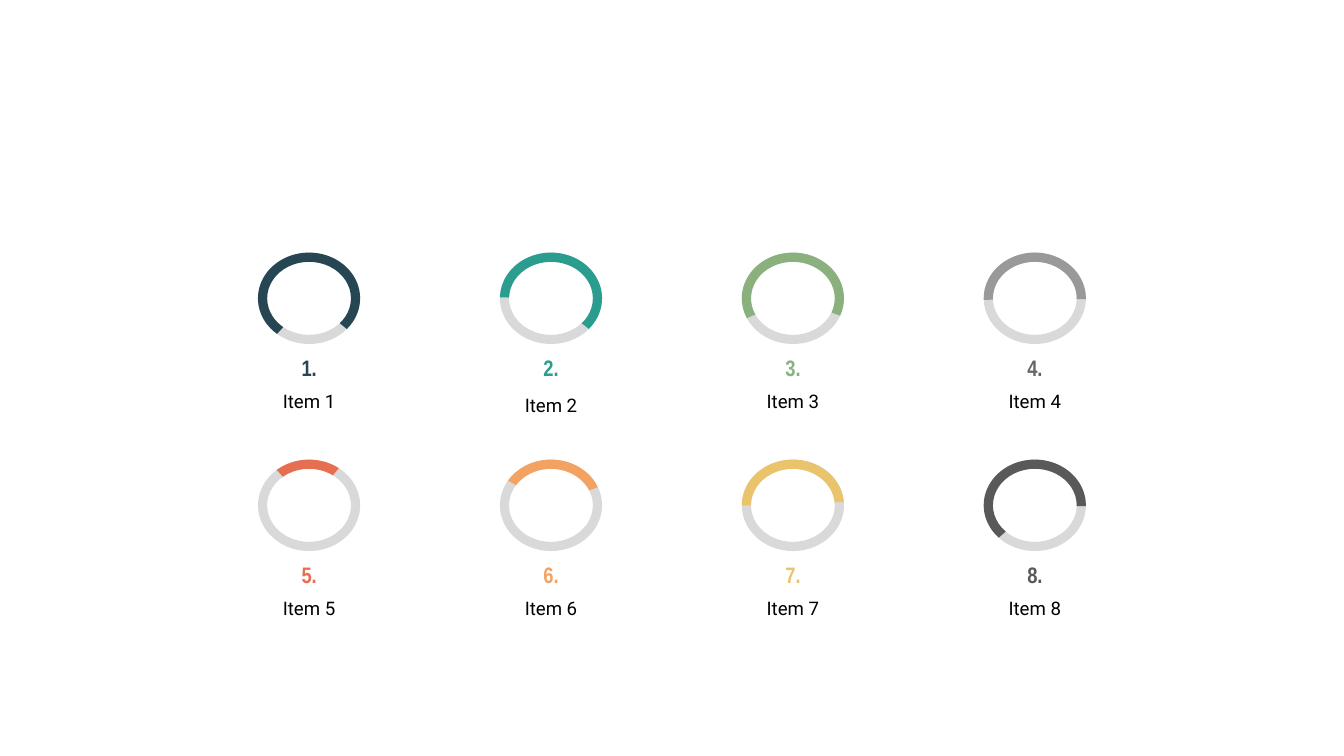
"""Build a slide with eight numbered progress rings in a four-by-two grid."""
from pptx import Presentation
from pptx.dml.color import RGBColor
from pptx.enum.shapes import MSO_SHAPE as Shape
from pptx.enum.text import MSO_ANCHOR as Anchor, PP_ALIGN as Align
from pptx.util import Inches, Pt

BLACK = RGBColor(0x00, 0x00, 0x00)
TRACK = RGBColor(0xD9, 0xD9, 0xD9)
NAVY = RGBColor(0x26, 0x46, 0x53)
TEAL = RGBColor(0x2A, 0x9D, 0x8F)
GREEN = RGBColor(0x8A, 0xB1, 0x7D)
GRAY = RGBColor(0x99, 0x99, 0x99)
MID_GRAY = RGBColor(0x66, 0x66, 0x66)
CORAL = RGBColor(0xE7, 0x6F, 0x51)
ORANGE = RGBColor(0xF4, 0xA2, 0x61)
YELLOW = RGBColor(0xE9, 0xC4, 0x6A)
DARK_GRAY = RGBColor(0x59, 0x59, 0x59)

COLUMNS = 4
FIRST_CENTER, COLUMN_PITCH = 2.3, 1.8
FIRST_TOP, ROW_PITCH = 1.88, 1.54
RING_WIDTH, RING_HEIGHT, RING_THICKNESS = 0.76, 0.68, 0.1
ADJUSTMENT_PER_DEGREE = 0.6

ITEMS = [
    ("Item 1", NAVY, NAVY, 131.9, 39.05, 0.98),
    ("Item 2", TEAL, TEAL, 181.1, 39.05, 1.01),
    ("Item 3", GREEN, GREEN, 156.67, 20.17, 0.98),
    ("Item 4", GRAY, MID_GRAY, 178.14, 0.96, 0.98),
    ("Item 5", CORAL, CORAL, 227.54, 308.63, 0.98),
    ("Item 6", ORANGE, ORANGE, 209.97, 338.8, 0.98),
    ("Item 7", YELLOW, YELLOW, 179.87, 356.15, 0.98),
    ("Item 8", DARK_GRAY, DARK_GRAY, 138.01, 0.96, 0.98),
]


def add_ring(kind, center, top, color, adjustments):
    ring = slide.shapes.add_shape(
        kind, Inches(center - RING_WIDTH / 2), Inches(top),
        Inches(RING_WIDTH), Inches(RING_HEIGHT))
    for index, value in enumerate(adjustments):
        ring.adjustments[index] = value
    ring.shadow.inherit = False
    ring.fill.solid()
    ring.fill.fore_color.rgb = color
    ring.line.fill.background()


def add_text(text, center, top, width, height, font_name, size, color, bold):
    box = slide.shapes.add_textbox(
        Inches(center - width / 2), Inches(top), Inches(width), Inches(height))
    frame = box.text_frame
    frame.word_wrap = True
    frame.vertical_anchor = Anchor.MIDDLE
    frame.margin_left = frame.margin_right = Inches(0.1)
    frame.margin_top = frame.margin_bottom = Inches(0.1)
    paragraph = frame.paragraphs[0]
    paragraph.alignment = Align.CENTER
    run = paragraph.add_run()
    run.text = text
    run.font.name = font_name
    run.font.size = Pt(size)
    run.font.bold = bold
    run.font.color.rgb = color


presentation = Presentation()
presentation.slide_width = Inches(10)
presentation.slide_height = Inches(10 * 9 / 16)
slide = presentation.slides.add_slide(presentation.slide_layouts[6])

for position, (label, arc_color, number_color, start, end, label_drop) in enumerate(ITEMS):
    row, column = divmod(position, COLUMNS)
    center = FIRST_CENTER + column * COLUMN_PITCH
    top = FIRST_TOP + row * ROW_PITCH
    add_ring(Shape.DONUT, center, top, TRACK, [RING_THICKNESS])
    add_ring(Shape.BLOCK_ARC, center, top, arc_color,
             [start * ADJUSTMENT_PER_DEGREE, end * ADJUSTMENT_PER_DEGREE, RING_THICKNESS])
    add_text(f"{position + 1}.", center, top + 0.78, 0.79, 0.15,
             "Arial Narrow", 12, number_color, True)
    add_text(label, center, top + label_drop, 1.6, 0.25,
             "Roboto", 10, BLACK, False)

presentation.save("out.pptx")
